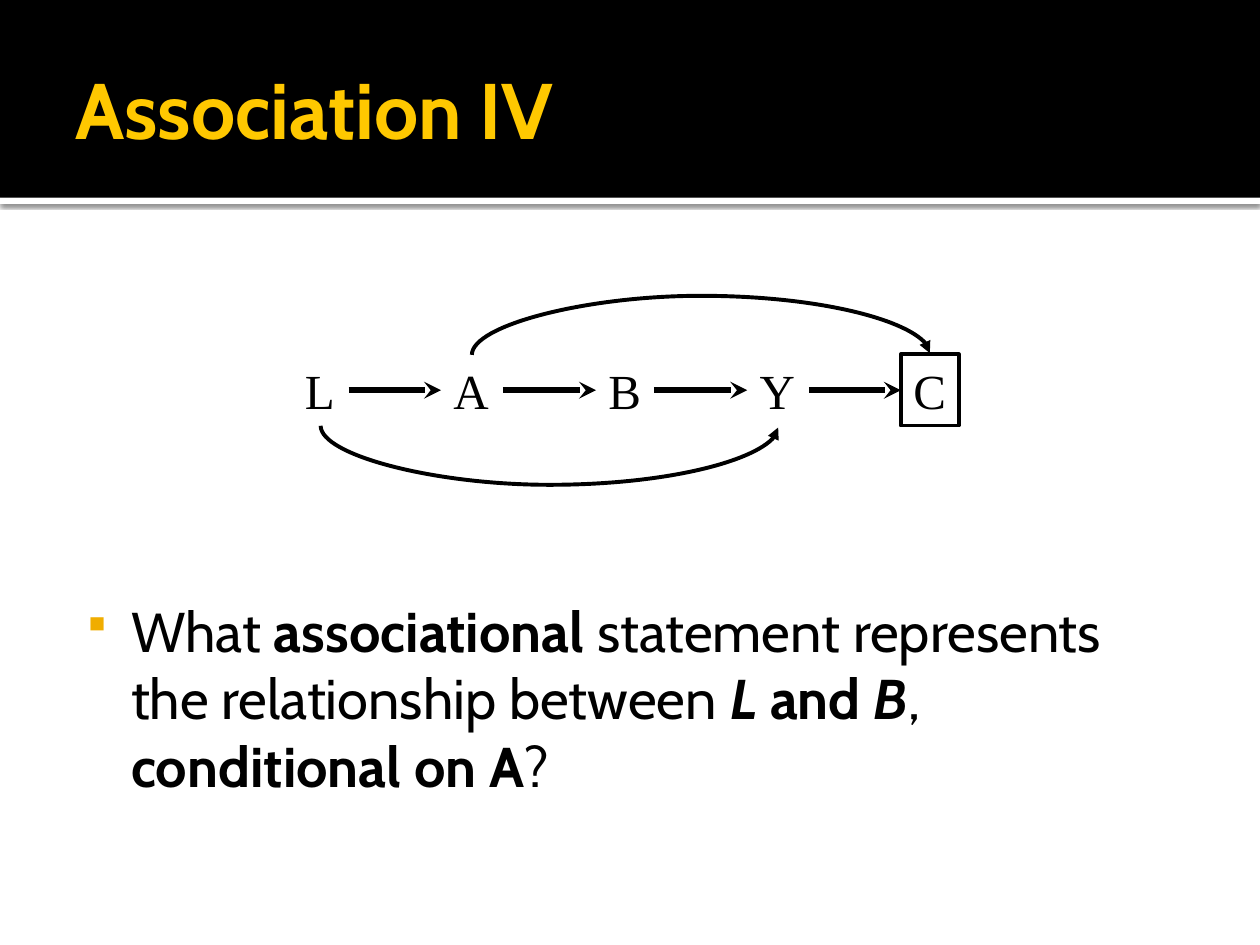
from lxml import etree
from pptx import Presentation
from pptx.dml.color import RGBColor
from pptx.enum.shapes import MSO_CONNECTOR, MSO_SHAPE
from pptx.enum.text import MSO_ANCHOR
from pptx.oxml import parse_xml
from pptx.oxml.ns import nsdecls, qn
from pptx.util import Pt

RECTANGLE = MSO_SHAPE.RECTANGLE
STRAIGHT = MSO_CONNECTOR.STRAIGHT
CURVE = MSO_CONNECTOR.CURVE
TOP, MIDDLE = MSO_ANCHOR.TOP, MSO_ANCHOR.MIDDLE

BLACK, WHITE, GOLD, AMBER = "000000", "FFFFFF", "FFC800", "F0AD00"
HEADING_FONT, NODE_FONT = "Cabin", "Times New Roman"

# Diagram: node name -> (left, width)
NODES = {"L": (167.2, 32), "A": (252, 35.3), "B": (340.6, 33.1),
         "Y": (427, 35.3), "C": (514.8, 33.1)}
NODE_TOP, NODE_HEIGHT = 202.3, 41
ARROW_Y = 223
CURVE_DEPTH = 34


def color(value):
    return RGBColor.from_string(value)


def add_block(slide, left, top, width, height, fill=None, line=None):
    shape = slide.shapes.add_shape(RECTANGLE, Pt(left), Pt(top), Pt(width), Pt(height))
    shape.shadow.inherit = False
    if fill:
        shape.fill.solid()
        shape.fill.fore_color.rgb = color(fill)
    else:
        shape.fill.background()
    if line:
        shape.line.color.rgb = color(line)
        shape.line.width = Pt(2)
    else:
        shape.line.fill.background()
    return shape


def add_shadow(shape):
    effects = shape._element.spPr.find(qn("a:effectLst"))
    effects.append(parse_xml(
        f'<a:outerShdw {nsdecls("a")} blurRad="{Pt(2.5)}" dist="{Pt(0.8)}" dir="5400000">'
        f'<a:srgbClr val="{BLACK}"><a:alpha val="60000"/></a:srgbClr></a:outerShdw>'))


def add_text(slide, left, top, width, height, runs, base,
             margins=(7.2, 3.6, 7.2, 3.6), anchor=TOP, wrap=True):
    """Write one paragraph; each run is a text and its changes to the base format."""
    box = slide.shapes.add_textbox(Pt(left), Pt(top), Pt(width), Pt(height))
    frame = box.text_frame
    frame.word_wrap = wrap
    frame.vertical_anchor = anchor
    for side, margin in zip(("left", "top", "right", "bottom"), margins):
        setattr(frame, f"margin_{side}", Pt(margin))
    paragraph = frame.paragraphs[0]
    for text, changes in runs:
        run = paragraph.add_run()
        run.text = text
        values = {**base, **changes}
        run.font.color.rgb = color(values.pop("color"))
        for name, value in values.items():
            setattr(run.font, name, value)
    return paragraph


def add_bullet(paragraph, indent, hanging):
    properties = paragraph._p.get_or_add_pPr()
    properties.set("marL", str(Pt(indent)))
    properties.set("indent", str(-Pt(hanging)))
    bullet_color = etree.SubElement(properties, qn("a:buClr"))
    etree.SubElement(bullet_color, qn("a:srgbClr"), val=AMBER)
    etree.SubElement(properties, qn("a:buSzPct"), val="80000")
    etree.SubElement(properties, qn("a:buFont"), typeface="Wingdings")
    etree.SubElement(properties, qn("a:buChar"), char="§")


def add_arrow(slide, kind, start, end, width, head):
    connector = slide.shapes.add_connector(kind, *(Pt(value) for value in (*start, *end)))
    connector.line.color.rgb = color(BLACK)
    connector.line.width = Pt(width)
    etree.SubElement(connector.line._get_or_add_ln(), qn("a:tailEnd"), type=head)
    etree.SubElement(connector._element.spPr, qn("a:effectLst"))
    return connector


def add_arc(slide, first, last, y, upward):
    """Curve from one node centre to another, turned a quarter to bulge up or down."""
    start, end = (NODES[name][0] + NODES[name][1] / 2 for name in (first, last))
    center, span = (start + end) / 2, end - start
    connector = add_arrow(slide, CURVE, (center - 0.5, y - span / 2),
                          (center + 0.5, y + span / 2), 2.25, "triangle")
    properties = connector._element.spPr
    properties.xfrm.set("rot", "5400000" if upward else "16200000")
    properties.xfrm.set("flipH", "1")
    if upward:
        properties.xfrm.set("flipV", "1")
    guides = properties.find(qn("a:prstGeom")).get_or_add_avLst()
    etree.SubElement(guides, qn("a:gd"), name="adj1", fmla=f"val {CURVE_DEPTH * 100000}")


def add_diagram(slide):
    # Node letters, the last one framed
    left, width = NODES["C"]
    add_block(slide, left, NODE_TOP, width, NODE_HEIGHT, line=BLACK)
    for name, (left, width) in NODES.items():
        paragraph = add_text(slide, left, NODE_TOP, width, NODE_HEIGHT, [(name, {})],
                             {"name": NODE_FONT, "size": Pt(28), "color": BLACK}, wrap=False)
        paragraph.space_before = Pt(5.6)

    # Straight arrows between neighbours
    places = list(NODES.values())
    for (left, width), (following, _) in zip(places, places[1:]):
        add_arrow(slide, STRAIGHT, (left + width, ARROW_Y), (following, ARROW_Y),
                  3.25, "stealth")

    # Long curved arrows
    add_arc(slide, "L", "Y", NODE_TOP + NODE_HEIGHT + 0.5, upward=False)
    add_arc(slide, "A", "C", NODE_TOP, upward=True)


def main():
    presentation = Presentation()
    presentation.slide_width, presentation.slide_height = Pt(720), Pt(540)
    slide = presentation.slides.add_slide(presentation.slide_layouts[6])

    # Header band and its white rule
    add_shadow(add_block(slide, 0, 113, 720, 3.6, fill=WHITE))
    add_block(slide, 0, 0, 720, 113, fill=BLACK)
    add_text(slide, 36, 12.2, 648, 98.6, [("Association IV", {})],
             {"name": HEADING_FONT, "size": Pt(45), "bold": True, "color": GOLD},
             margins=(7.2, 3.6, 3.6, 3.6), anchor=MIDDLE)

    add_diagram(slide)

    # Question
    bold, bold_italic = {"bold": True}, {"bold": True, "italic": True}
    question = [("What ", {}), ("associational", bold),
                (" statement represents the relationship between ", {}),
                ("L", bold_italic), (" and ", bold), ("B", bold_italic),
                (", ", {}), ("conditional on A", bold), ("?", {})]
    paragraph = add_text(slide, 36, 341, 648, 163, question,
                         {"name": HEADING_FONT, "size": Pt(32), "color": BLACK},
                         margins=(4.3, 0, 7.2, 3.6))
    add_bullet(paragraph, 34.6, 25.2)

    presentation.save("out.pptx")


if __name__ == "__main__":
    main()
